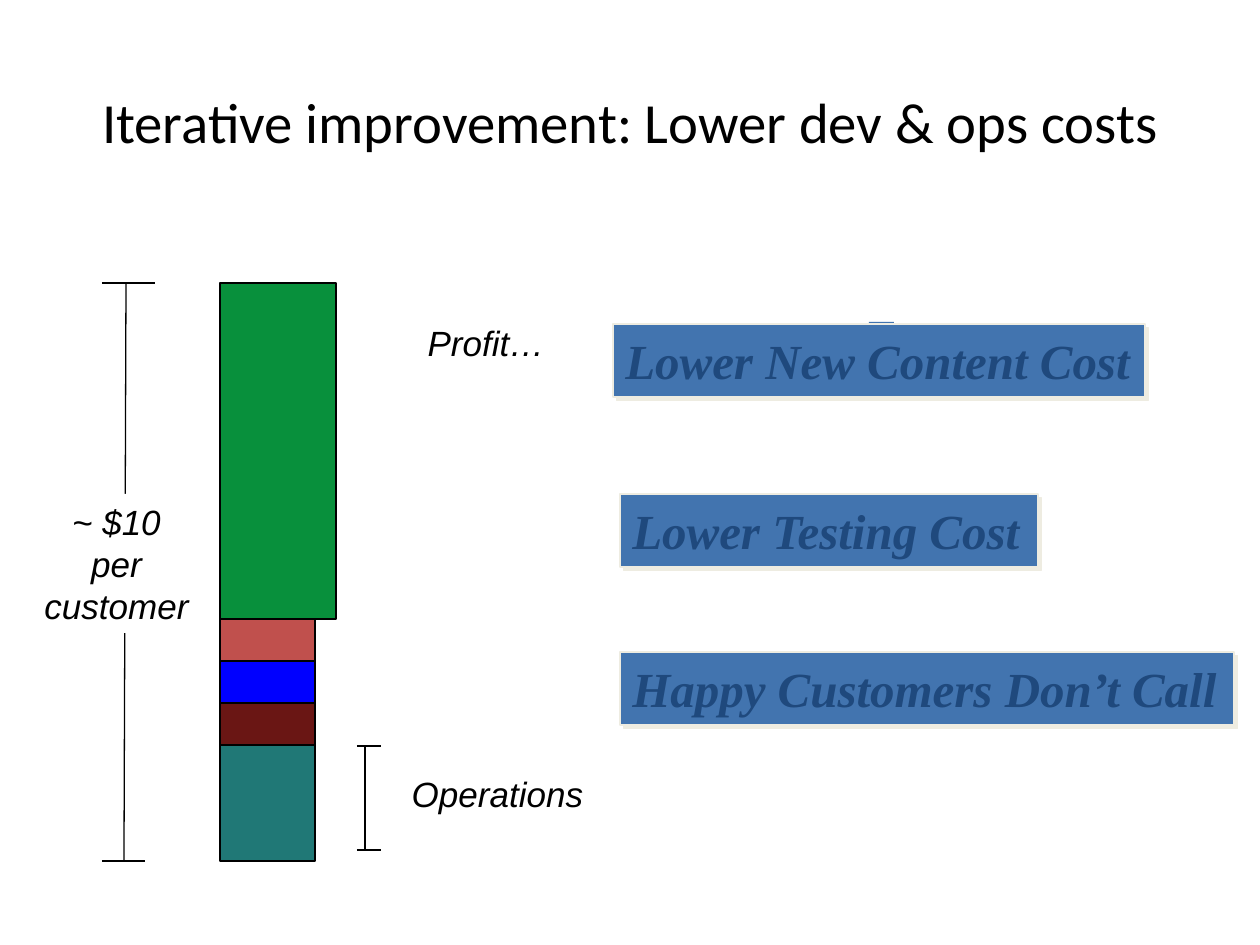
from lxml import etree
from pptx import Presentation
from pptx.dml.color import RGBColor
from pptx.enum.shapes import MSO_CONNECTOR, MSO_SHAPE
from pptx.enum.text import MSO_ANCHOR, PP_ALIGN
from pptx.oxml import parse_xml
from pptx.oxml.ns import nsdecls, qn
from pptx.util import Pt

STRAIGHT = MSO_CONNECTOR.STRAIGHT
RECTANGLE = MSO_SHAPE.RECTANGLE
MIDDLE = MSO_ANCHOR.MIDDLE
LEFT, CENTER = PP_ALIGN.LEFT, PP_ALIGN.CENTER

BLACK = RGBColor(0x00, 0x00, 0x00)
WHITE = RGBColor(0xFF, 0xFF, 0xFF)
GREEN = RGBColor(0x08, 0x90, 0x3C)
RED = RGBColor(0xC0, 0x50, 0x4D)
BLUE = RGBColor(0x00, 0x00, 0xFF)
MAROON = RGBColor(0x6A, 0x16, 0x14)
TEAL = RGBColor(0x20, 0x78, 0x76)
STEEL = RGBColor(0x42, 0x74, 0xAF)
NAVY = RGBColor(0x1F, 0x49, 0x7D)
CREAM = RGBColor(0xEE, 0xEC, 0xE1)

SCALE = 914400 / 126  # EMU per px


def emu(*lengths):
    return [round(length * SCALE) for length in lengths]


def add_text(page, place, lines, align, font_name, size, color, bold=False):
    box = page.shapes.add_textbox(*emu(*place))
    frame = box.text_frame
    frame.word_wrap = False
    frame.text = "\n".join(lines)
    for para in frame.paragraphs:
        para.alignment = align
        para.font.name = font_name
        para.font.size = Pt(size)
        para.font.italic = True
        para.font.bold = bold
        para.font.color.rgb = color
    return box


deck = Presentation()
deck.slide_width, deck.slide_height = emu(1260, 945)
page = deck.slides.add_slide(deck.slide_layouts[5])

# Title
title = page.shapes.title
title.left, title.top, title.width, title.height = emu(63, 84, 1134, 73)
title.text_frame.text = "Iterative improvement: Lower dev & ops costs"
title.text_frame.vertical_anchor = MIDDLE
para = title.text_frame.paragraphs[0]
para.alignment = CENTER
para.font.name = "Calibri"
para.font.size = Pt(32.4)
para.font.color.rgb = BLACK

# Measuring brackets: total revenue, then operations
brackets = [
    (126, 283, 124, 861), (102, 861, 145, 861), (102, 283, 155, 283),
    (365, 746, 365, 850), (357, 850, 381, 850), (357, 746, 381, 746),
]
for ends in brackets:
    line = page.shapes.add_connector(STRAIGHT, *emu(*ends))
    line.line.color.rgb = BLACK
    line.line.width = Pt(0.75)
    etree.SubElement(line._element.spPr, qn("a:effectLst"))

# Labels
labels = [
    ((415, 315, 142, 54), ["Profit…"]),
    ((399, 766, 197, 54), ["Operations"]),
    ((32, 494, 169, 139), ["~ $10", "per", "customer"]),
]
for place, lines in labels:
    label = add_text(page, place, lines, CENTER, "Arial", 20, BLACK)
# The last label interrupts the revenue bracket
label.fill.solid()
label.fill.fore_color.rgb = WHITE

# Stacked bar, from the top down
top = 283
for width, height, color in [(116, 336, GREEN), (95, 42, RED), (95, 42, BLUE),
                             (95, 42, MAROON), (95, 116, TEAL)]:
    segment = page.shapes.add_shape(RECTANGLE, *emu(220, top, width, height))
    segment.shadow.inherit = False
    segment.fill.solid()
    segment.fill.fore_color.rgb = color
    segment.line.color.rgb = BLACK
    segment.line.width = Pt(1)
    top += height

# Tab behind the first card
tab = page.shapes.add_shape(RECTANGLE, *emu(869, 322, 25, 50))
tab.shadow.inherit = False
tab.fill.solid()
tab.fill.fore_color.rgb = STEEL
tab.line.fill.background()

# Cards with an offset shadow
cards = [
    ((613, 324, 532, 73), "Lower New Content Cost"),
    ((620, 494, 418, 73), "Lower Testing Cost"),
    ((620, 652, 614, 73), "Happy Customers Don’t Call"),
]
for place, words in cards:
    card = add_text(page, place, [words], LEFT, "Times New Roman", 28, NAVY, bold=True)
    card.fill.solid()
    card.fill.fore_color.rgb = STEEL
    card.line.color.rgb = CREAM
    card.line.width = Pt(1)
    card._element.spPr.append(parse_xml(
        f'<a:effectLst {nsdecls("a")}><a:outerShdw dist="35560" dir="2700000" '
        f'algn="ctr" rotWithShape="0"><a:srgbClr val="{CREAM}"/>'
        '</a:outerShdw></a:effectLst>'))

deck.save("out.pptx")
